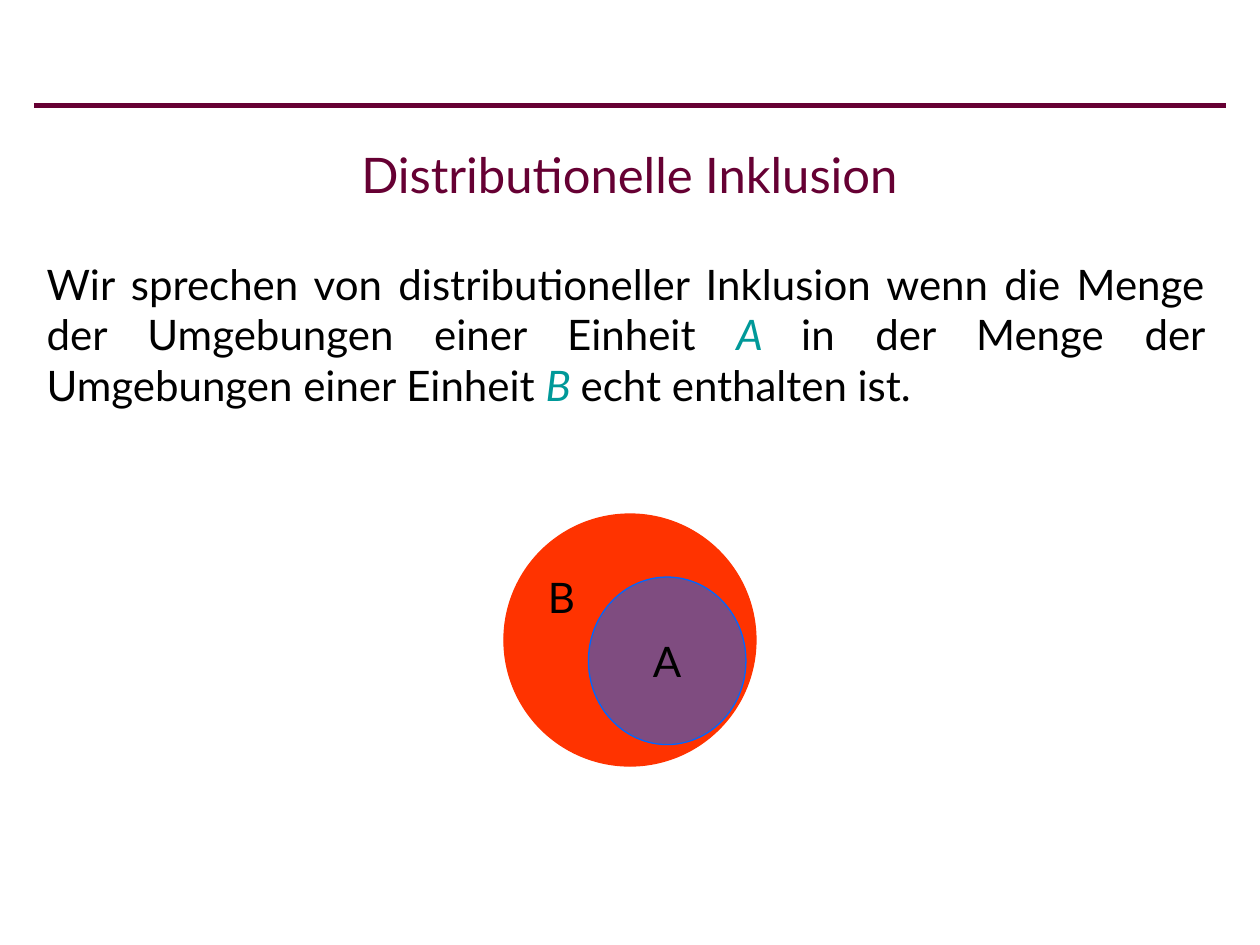
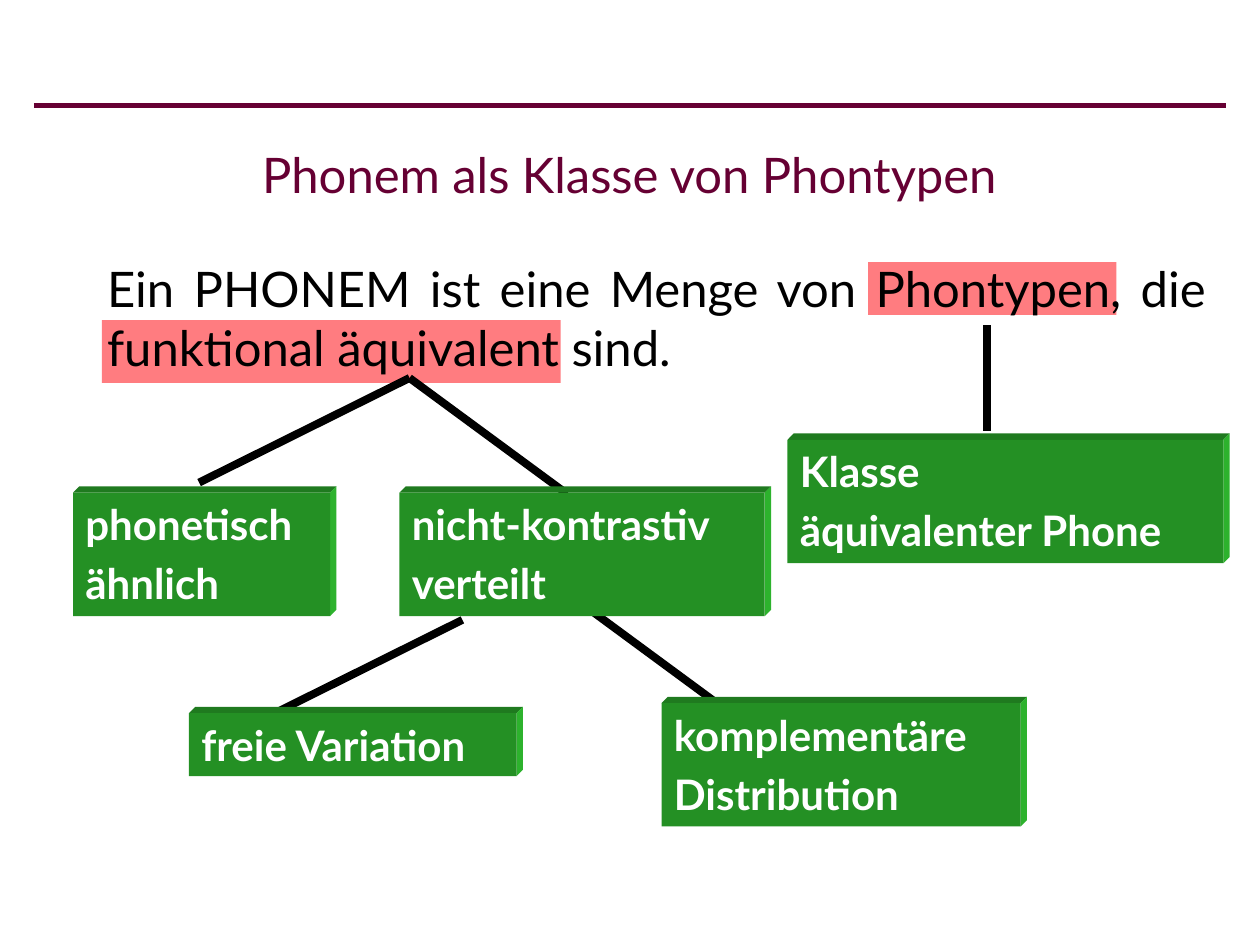
from dataclasses import dataclass
from typing import Any

import pptx
import pptx.dml.color
import pptx.enum.shapes
import pptx.enum.text
import pptx.oxml
import pptx.oxml.ns
import pptx.presentation
import pptx.shapes.autoshape
import pptx.shapes.connector
import pptx.slide
import pptx.text.text
import pptx.util
from pptx.util import Inches

Align = pptx.enum.text.PP_ALIGN
Anchor = pptx.enum.text.MSO_ANCHOR
Preset = pptx.enum.shapes.MSO_SHAPE


@dataclass(frozen=True)
class Theme:
    font: str = "Lato"
    heading: str = "660033"
    ink: str = "000000"
    variable: str = "009999"
    outer_set: str = "FF3300"
    inner_set: str = "0066FF"
    highlight: str = "FF7C80"
    face: str = "249024"
    top_edge: str = "1F7A1F"
    right_edge: str = "2DB22D"
    on_face: str = "FFFFFF"
    title_size: float = 28
    statement_size: float = 28
    text_size: float = 24
    rule_width: float = 3
    branch_width: float = 4.5
    outline_width: float = 0.75
    paragraph_gap: float = 4.8
    depth: float = 0.05


THEME = Theme()


@dataclass(frozen=True)
class Area:
    left: float
    top: float
    width: float
    height: float

    def lengths(self) -> list[int]:
        return [Inches(v) for v in (self.left, self.top, self.width, self.height)]


@dataclass(frozen=True)
class Span:
    text: str
    color: str = THEME.ink
    italic: bool = False


@dataclass(frozen=True)
class Stroke:
    x1: float
    y1: float
    x2: float
    y2: float


@dataclass(frozen=True)
class Branch:
    stroke: Stroke
    area: Area
    lines: tuple[str, ...]


TITLE_AREA = Area(0.27, 0.84, 9.45, 1.08)
HEADER_RULE = Stroke(0.27, 0.84, 9.73, 0.84)

DEFINITION = (
    Span("Wir sprechen von distributioneller Inklusion wenn die Menge der Umgebungen einer Einheit "),
    Span("A ", THEME.variable, True),
    Span("in der Menge der Umgebungen einer Einheit "),
    Span("B ", THEME.variable, True),
    Span("echt enthalten ist."),
)

PHONEME = (
    Span("Ein PHONEM ist eine Menge von Phontypen, die funktional äquivalent sind."),
)

KEY_TERMS = (Area(0.81, 2.54, 3.64, 0.5), Area(6.89, 2.08, 1.97, 0.42))

BRANCHES = (
    Branch(Stroke(4.67, 4.83, 5.92, 5.75), Area(5.25, 5.58, 2.85, 0.98),
           ("komplementäre", "Distribution")),
    Branch(Stroke(3.25, 3, 1.58, 3.83), Area(0.58, 3.91, 2.04, 0.98),
           ("phonetisch", "ähnlich")),
    Branch(Stroke(3.25, 3, 4.5, 3.92), Area(3.17, 3.91, 2.9, 0.98),
           ("nicht-kontrastiv", "verteilt")),
    Branch(Stroke(3.67, 4.92, 2, 5.75), Area(1.5, 5.66, 2.6, 0.5),
           ("freie Variation",)),
    Branch(Stroke(7.83, 2.58, 7.83, 3.42), Area(6.25, 3.49, 3.46, 0.98),
           ("Klasse", "äquivalenter Phone")),
)


def rgb(value: str) -> pptx.dml.color.RGBColor:
    return pptx.dml.color.RGBColor.from_string(value)


def apply(target: Any, formats: dict[str, Any]) -> None:
    for name, value in formats.items():
        setattr(target, name, value)


def write(paragraph: Any, spans: tuple[Span, ...], size: float, align: Any,
          bold: bool = False, gap: float = 0) -> None:
    apply(paragraph, {"alignment": align, "space_before": pptx.util.Pt(gap)})
    for span in spans:
        run = paragraph.add_run()
        run.text = span.text
        apply(run.font, {"name": THEME.font, "size": pptx.util.Pt(size),
                         "bold": bold, "italic": span.italic})
        run.font.color.rgb = rgb(span.color)


def set_frame(frame: pptx.text.text.TextFrame, anchor: Any, wrap: bool = True) -> None:
    apply(frame, {"auto_size": pptx.enum.text.MSO_AUTO_SIZE.NONE,
                  "vertical_anchor": anchor, "word_wrap": wrap})


def place(placeholder: Any, area: Area) -> None:
    names = ("left", "top", "width", "height")
    apply(placeholder, dict(zip(names, area.lengths())))


def paint(shape: Any, fill: str, outline: str | None = None) -> None:
    shape.shadow.inherit = False
    shape.fill.solid()
    shape.fill.fore_color.rgb = rgb(fill)
    if outline is None:
        shape.line.fill.background()
    else:
        shape.line.color.rgb = rgb(outline)
        shape.line.width = pptx.util.Pt(THEME.outline_width)


def add_preset(slide: pptx.slide.Slide, preset: Any, area: Area, fill: str,
               outline: str | None = None) -> pptx.shapes.autoshape.Shape:
    shape = slide.shapes.add_shape(preset, *area.lengths())
    paint(shape, fill, outline)
    return shape


def add_stroke(slide: pptx.slide.Slide, stroke: Stroke, color: str,
               width: float) -> pptx.shapes.connector.Connector:
    connector = slide.shapes.add_connector(
        pptx.enum.shapes.MSO_CONNECTOR.STRAIGHT,
        Inches(stroke.x1), Inches(stroke.y1), Inches(stroke.x2), Inches(stroke.y2))
    connector.line.color.rgb = rgb(color)
    connector.line.width = pptx.util.Pt(width)
    connector.element.spPr.append(pptx.oxml.parse_xml(
        f'<a:effectLst {pptx.oxml.ns.nsdecls("a")}/>'))
    return connector


def add_edge(slide: pptx.slide.Slide, points: list[tuple[float, float]], color: str) -> None:
    corners = [(Inches(x), Inches(y)) for x, y in points]
    builder = slide.shapes.build_freeform(*corners[0])
    builder.add_line_segments(corners[1:], close=True)
    paint(builder.convert_to_shape(), color)


def add_block(slide: pptx.slide.Slide, area: Area, lines: tuple[str, ...]) -> None:
    depth = THEME.depth
    left, top = area.left, area.top
    right, bottom = left + area.width, top + area.height
    back_corner = (right + depth, top - depth)
    add_edge(slide, [(left, top), (left + depth, top - depth), back_corner, (right, top)],
             THEME.top_edge)
    add_edge(slide, [(right, top), back_corner, (right + depth, bottom - depth),
                     (right, bottom)], THEME.right_edge)
    frame = add_preset(slide, Preset.RECTANGLE, area, THEME.face).text_frame
    set_frame(frame, Anchor.TOP)
    for index, line in enumerate(lines):
        paragraph = frame.add_paragraph() if index else frame.paragraphs[0]
        write(paragraph, (Span(line, THEME.on_face),), THEME.text_size, Align.JUSTIFY,
              bold=True, gap=THEME.paragraph_gap if index else 0)


def add_content_slide(deck: pptx.presentation.Presentation, heading: str, body_area: Area,
                      statement: tuple[Span, ...], size: float) -> pptx.slide.Slide:
    slide = deck.slides.add_slide(deck.slide_layouts[1])
    title, body = slide.shapes.title, slide.placeholders[1]
    place(title, TITLE_AREA)
    set_frame(title.text_frame, Anchor.MIDDLE)
    write(title.text_frame.paragraphs[0], (Span(heading, THEME.heading),),
          THEME.title_size, Align.CENTER)
    place(body, body_area)
    set_frame(body.text_frame, Anchor.TOP)
    paragraph = body.text_frame.paragraphs[0]
    properties = paragraph._p.get_or_add_pPr()
    for name in ("marL", "indent"):
        properties.set(name, "0")
    properties.append(pptx.oxml.parse_xml(f'<a:buNone {pptx.oxml.ns.nsdecls("a")}/>'))
    write(paragraph, statement, size, Align.JUSTIFY)
    return slide


def share_header_rule(deck: pptx.presentation.Presentation, slide: pptx.slide.Slide) -> None:
    rule = add_stroke(slide, HEADER_RULE, THEME.heading, THEME.rule_width)
    rule.element.nvCxnSpPr.cNvPr.set("id", "20")
    deck.slide_master.shapes.element.append(rule.element)


def draw_inclusion(slide: pptx.slide.Slide) -> None:
    add_preset(slide, Preset.OVAL, Area(4, 4.08, 2, 2), THEME.outer_set, THEME.outer_set)
    outer_label = slide.shapes.add_textbox(*Area(4.25, 4.49, 0.4, 0.5).lengths()).text_frame
    set_frame(outer_label, Anchor.TOP, wrap=False)
    write(outer_label.paragraphs[0], (Span("B"),), THEME.text_size, Align.JUSTIFY)

    inner_set = add_preset(slide, Preset.OVAL, Area(4.67, 4.58, 1.25, 1.33),
                           THEME.inner_set, THEME.inner_set)
    fill_color = inner_set.element.spPr.find(
        f'{pptx.oxml.ns.qn("a:solidFill")}/{pptx.oxml.ns.qn("a:srgbClr")}')
    fill_color.append(pptx.oxml.parse_xml(
        f'<a:alpha {pptx.oxml.ns.nsdecls("a")} val="50000"/>'))
    set_frame(inner_set.text_frame, Anchor.MIDDLE, wrap=False)
    write(inner_set.text_frame.paragraphs[0], (Span("A"),), THEME.text_size, Align.CENTER)


def draw_phoneme_tree(slide: pptx.slide.Slide) -> None:
    for area in KEY_TERMS:
        highlight = add_preset(slide, Preset.RECTANGLE, area, THEME.highlight)
        slide.shapes.element.insert(2, highlight.element)
    for branch in BRANCHES:
        add_stroke(slide, branch.stroke, THEME.ink, THEME.branch_width)
        add_block(slide, branch.area, branch.lines)


def main() -> None:
    deck = pptx.Presentation()
    apply(deck, {"slide_width": Inches(10), "slide_height": Inches(7.5)})
    inclusion = add_content_slide(deck, "Distributionelle Inklusion",
                                  Area(0.27, 2, 9.39, 4.58), DEFINITION, THEME.text_size)
    share_header_rule(deck, inclusion)
    draw_inclusion(inclusion)
    phoneme = add_content_slide(deck, "Phonem als Klasse von Phontypen",
                                Area(0.75, 2, 8.92, 4.58), PHONEME, THEME.statement_size)
    draw_phoneme_tree(phoneme)
    deck.save("out.pptx")


if __name__ == "__main__":
    main()
